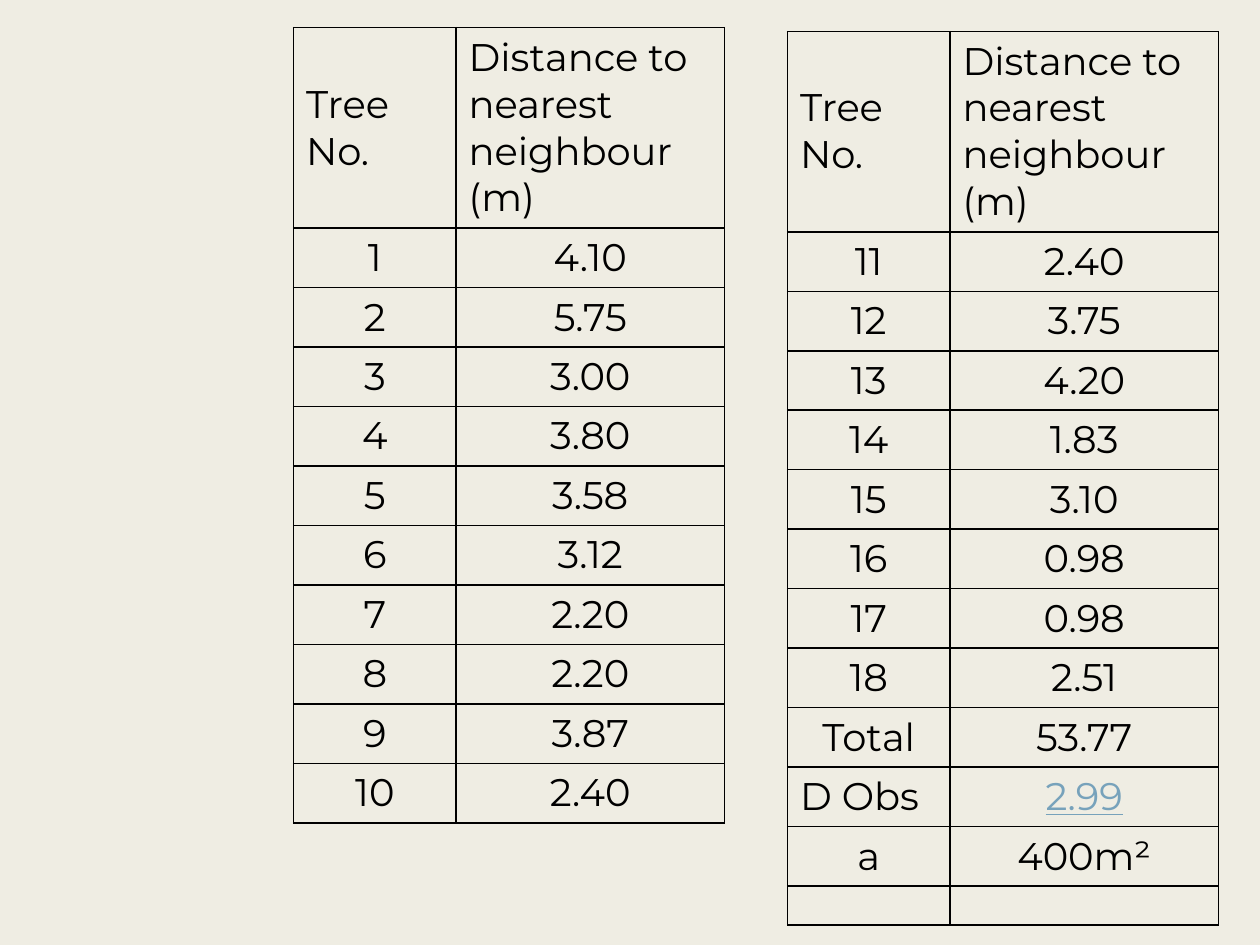
from dataclasses import dataclass

from lxml.etree import SubElement
from pptx import Presentation
from pptx.dml.color import RGBColor as Color
from pptx.enum.text import MSO_ANCHOR as Anchor, PP_ALIGN as Align
from pptx.oxml.ns import qn
from pptx.util import Inches, Pt


@dataclass(frozen=True)
class Theme:
    paper: str = "EFEDE3"
    ink: str = "000000"
    accent: str = "77A2BB"
    font: str = "Montserrat"
    size: int = 22
    rule: int = 1


@dataclass(frozen=True)
class Box:
    left: float
    top: float
    width: float


THEME = Theme()
COLUMNS = (1.29, 2.13)
HEADER_ROW, DATA_ROW, EMPTY_ROW = 1.59, 0.47, 0.31

HEADINGS = ("Tree No.", "Distance to nearest neighbour (m)")
FIRST_TREES = ("4.10", "5.75", "3.00", "3.80", "3.58",
               "3.12", "2.20", "2.20", "3.87", "2.40")
LAST_TREES = ("2.40", "3.75", "4.20", "1.83", "3.10", "0.98", "0.98", "2.51")
SUMMARY = [("Total", "53.77"), ("D Obs", "2.99"), ("a", "400m²"), ("", "")]
LEFT_ALIGNED = {*HEADINGS, "D Obs"}
HIGHLIGHTED = {"2.99"}


def numbered(distances, start):
    return [(str(number), distance)
            for number, distance in enumerate(distances, start)]


def row_height(index, row):
    if index == 0:
        return HEADER_ROW
    return DATA_ROW if any(row) else EMPTY_ROW


def draw_borders(cell):
    """Rule all four sides; border lines must come before the cell fill."""
    properties = cell._tc.get_or_add_tcPr()
    for position, side in enumerate(("a:lnL", "a:lnR", "a:lnT", "a:lnB")):
        line = SubElement(properties, qn(side), w=str(Pt(THEME.rule)))
        fill = SubElement(line, qn("a:solidFill"))
        SubElement(fill, qn("a:srgbClr"), val=THEME.ink)
        properties.insert(position, line)


def fill_cell(cell, text):
    cell.fill.background()
    draw_borders(cell)
    cell.vertical_anchor = Anchor.MIDDLE
    if not text:
        # Without margins the empty row can stay low
        cell.margin_top = cell.margin_bottom = 0
        return
    para = cell.text_frame.paragraphs[0]
    para.alignment = Align.LEFT if text in LEFT_ALIGNED else Align.CENTER
    span = para.add_run()
    span.text = text
    span.font.name = THEME.font
    span.font.size = Pt(THEME.size)
    marked = text in HIGHLIGHTED
    span.font.underline = marked
    span.font.color.rgb = Color.from_string(THEME.accent if marked else THEME.ink)


def add_tree_table(page, box, records):
    rows = [HEADINGS, *records]
    heights = [row_height(index, row) for index, row in enumerate(rows)]
    table = page.shapes.add_table(
        len(rows), len(COLUMNS), Inches(box.left), Inches(box.top),
        Inches(box.width), Inches(sum(heights))).table
    table.first_row = table.horz_banding = False
    for column, width in zip(table.columns, COLUMNS):
        column.width = Inches(box.width * width / sum(COLUMNS))
    for table_row, height, row in zip(table.rows, heights, rows):
        table_row.height = Inches(height)
        for cell, text in zip(table_row.cells, row):
            fill_cell(cell, text)


def main():
    deck = Presentation()
    deck.slide_width, deck.slide_height = Inches(10), Inches(7.5)
    page = deck.slides.add_slide(deck.slide_layouts[6])
    page.background.fill.solid()
    page.background.fill.fore_color.rgb = Color.from_string(THEME.paper)

    # Trees 1 to 10, then the remaining trees with the summary
    width = sum(COLUMNS)
    add_tree_table(page, Box(2.33, 0.22, width), numbered(FIRST_TREES, 1))
    add_tree_table(page, Box(6.25, 0.25, width),
                   numbered(LAST_TREES, len(FIRST_TREES) + 1) + SUMMARY)
    deck.save("out.pptx")


if __name__ == "__main__":
    main()
